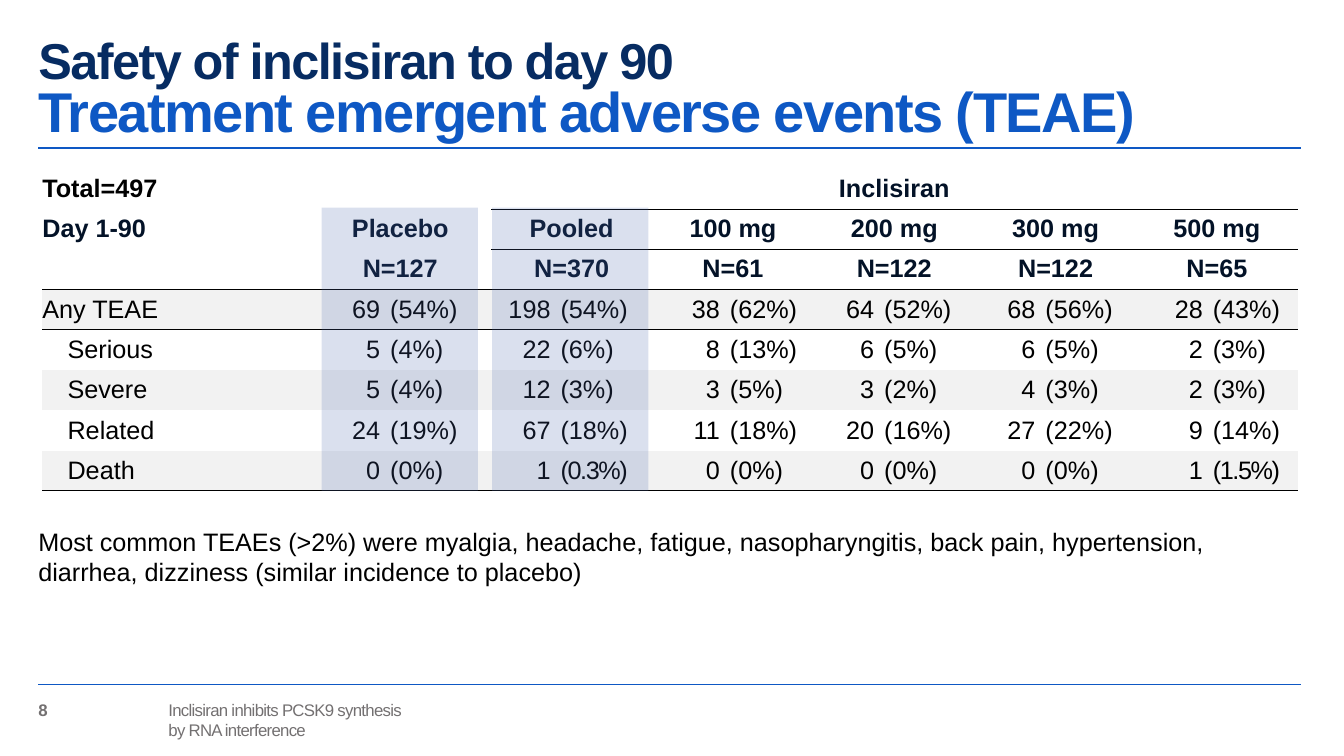
from copy import deepcopy

from lxml import etree
from pptx import Presentation
from pptx import util as u
from pptx.dml import color as c
from pptx.enum import shapes, text
from pptx.oxml import ns

SCALE = 9144  # EMU per px, 100 px to the inch
BLACK, WHITE, BAND = "000000", "FFFFFF", "F2F2F2"
NAVY, BLUE, INK, GREY, TINT = "072C62", "0E58C4", "031227", "737071", "4A66AC"
NO_GRID = "{2D5ABB26-0587-4C30-8999-92F81FD0307C}"
LEFT, CENTER, RIGHT = text.PP_ALIGN.LEFT, text.PP_ALIGN.CENTER, text.PP_ALIGN.RIGHT

COLUMNS = [275, 60, 100, 10, 59, 101, 67, 93, 60, 100, 60, 100, 66, 94]
ROW_HEIGHT = 40
GAP_COLUMN = 3
GROUPS = [  # first column, dose, group size
    (1, "Placebo", "N=127"),
    (4, "Pooled", "N=370"),
    (6, "100 mg", "N=61"),
    (8, "200 mg", "N=122"),
    (10, "300 mg", "N=122"),
    (12, "500 mg", "N=65"),
]
EVENTS = {
    "Any TEAE": "69 (54%) 198 (54%) 38 (62%) 64 (52%) 68 (56%) 28 (43%)",
    "Serious": "5 (4%) 22 (6%) 8 (13%) 6 (5%) 6 (5%) 2 (3%)",
    "Severe": "5 (4%) 12 (3%) 3 (5%) 3 (2%) 4 (3%) 2 (3%)",
    "Related": "24 (19%) 67 (18%) 11 (18%) 20 (16%) 27 (22%) 9 (14%)",
    "Death": "0 (0%) 1 (0.3%) 0 (0%) 0 (0%) 0 (0%) 1 (1.5%)",
}
# row -> (border tag, points, first column)
RULES = {
    0: ("a:lnB", 0.25, 4),
    1: ("a:lnT", 0.25, 4),
    2: ("a:lnB", 1, 0),
    3: ("a:lnT", 1, 0),
    7: ("a:lnB", 1, 0),
}


def px(length):
    return u.Emu(length * SCALE)


def rgb(value):
    return c.RGBColor.from_string(value)


def set_all(target, **values):
    for name, value in values.items():
        setattr(target, name, value)


def add_span(para, words, size, color, bold=False, spacing=0):
    span = para.add_run()
    span.text = words
    set_all(span.font, name="Arial", size=u.Pt(size), bold=bold)
    span.font.color.rgb = rgb(color)
    if spacing:
        span.font._element.set("spc", str(round(spacing * 100)))
    return span


def add_break(para, span):
    """End the line, keeping the size of the span before it."""
    para.add_line_break()
    para._p[-1].append(deepcopy(span.font._element))


def set_frame(frame, anchor=text.MSO_ANCHOR.TOP):
    set_all(frame, word_wrap=True, auto_size=text.MSO_AUTO_SIZE.NONE,
            vertical_anchor=anchor, margin_left=0, margin_top=0,
            margin_right=0, margin_bottom=0)
    return frame.paragraphs[0]


def add_box(slide, left, top, width, height):
    box = slide.shapes.add_textbox(px(left), px(top), px(width), px(height))
    return set_frame(box.text_frame)


def add_rule(slide, top):
    line = slide.shapes.add_connector(
        shapes.MSO_CONNECTOR.STRAIGHT, px(1290), px(top), px(38), px(top))
    line.line.color.rgb = rgb(BLUE)
    line.line.width = u.Pt(1)
    etree.SubElement(line._element.spPr, ns.qn("a:effectLst"))


def add_highlight(slide, left):
    band = slide.shapes.add_shape(
        shapes.MSO_SHAPE.RECTANGLE, px(left), px(206), px(155), px(281))
    band.shadow.inherit = False
    band.line.fill.background()
    band.fill.solid()
    band.fill.fore_color.rgb = rgb(TINT)
    tint = band._element.spPr.find(".//" + ns.qn("a:srgbClr"))
    etree.SubElement(tint, ns.qn("a:alpha"), val="20000")


def add_title(slide):
    title = slide.shapes.title
    set_all(title, left=px(38), top=px(35), width=px(1252), height=px(112))
    para = set_frame(title.text_frame, text.MSO_ANCHOR.MIDDLE)
    set_all(para, alignment=LEFT, line_spacing=0.8)
    first = add_span(para, "Safety of inclisiran to day 90", 36, NAVY, True, -1.1)
    add_break(para, first)
    add_span(para, "Treatment emergent adverse events (TEAE)", 40, BLUE, True, -1.1)


def add_footer(slide):
    para = add_box(slide, 38, 694, 1261, 40)
    tabs = etree.SubElement(para._p.get_or_add_pPr(), ns.qn("a:tabLst"))
    etree.SubElement(tabs, ns.qn("a:tab"), pos=str(px(129)), algn="l")
    add_span(para, "8\t", 12, GREY, True)
    first = add_span(para, "Inclisiran inhibits PCSK9 synthesis", 12, GREY, spacing=-0.5)
    add_break(para, first)
    add_span(para, "\tby RNA interference", 12, GREY, spacing=-0.5)


def prepare_cell(cell, row, column):
    """Clear the margins, then draw the rule and the row fill."""
    set_all(cell, margin_left=0, margin_top=0, margin_right=0, margin_bottom=0,
            vertical_anchor=text.MSO_ANCHOR.MIDDLE)
    tag, points, first = RULES.get(row, (None, 0, len(COLUMNS)))
    if column >= first:
        border = etree.SubElement(
            cell._tc.get_or_add_tcPr(), ns.qn(tag), w=str(u.Pt(points)))
        fill = etree.SubElement(border, ns.qn("a:solidFill"))
        etree.SubElement(fill, ns.qn("a:srgbClr"), val=BLACK)
    cell.fill.solid()
    cell.fill.fore_color.rgb = rgb(BAND if row in (3, 5, 7) else WHITE)


def write_cell(cell, words, align=LEFT, color=BLACK, bold=False, spacing=0):
    para = cell.text_frame.paragraphs[0]
    para.alignment = align
    add_span(para, words, 18, color, bold, spacing)


def write_header(table):
    write_cell(table.cell(0, 0), "Total=497", bold=True)
    write_cell(table.cell(1, 0), "Day 1-90", color=INK, bold=True)
    table.cell(0, 1).merge(table.cell(0, 2))
    table.cell(0, 4).merge(table.cell(0, 13))
    write_cell(table.cell(0, 4), "Inclisiran", CENTER, INK, True)
    for column, *labels in GROUPS:
        for row, label in enumerate(labels, 1):
            table.cell(row, column).merge(table.cell(row, column + 1))
            write_cell(table.cell(row, column), label, CENTER, INK, True)


def write_events(table):
    value_columns = [n for n in range(1, len(COLUMNS)) if n != GAP_COLUMN]
    for row, (event, values) in enumerate(EVENTS.items(), 3):
        name = table.cell(row, 0)
        write_cell(name, event)
        if event != "Any TEAE":
            name.text_frame.paragraphs[0]._p.get_or_add_pPr().set("marL", str(px(25)))
        for column, value in zip(value_columns, values.split()):
            cell = table.cell(row, column)
            percent = value.startswith("(")
            cell.margin_left = px(10 if percent else 0)
            write_cell(cell, value, LEFT if percent else RIGHT,
                       spacing=-1 if "." in value else 0)


def add_event_table(slide):
    rows = 3 + len(EVENTS)
    table = slide.shapes.add_table(
        rows, len(COLUMNS), px(42), px(167), px(sum(COLUMNS)), px(rows * ROW_HEIGHT)).table
    set_all(table, first_row=False, horz_banding=False)
    table._tbl.tblPr.find(ns.qn("a:tableStyleId")).text = NO_GRID
    for column, width in zip(table.columns, COLUMNS):
        column.width = px(width)
    for row in range(rows):
        table.rows[row].height = px(ROW_HEIGHT)
        for column in range(len(COLUMNS)):
            prepare_cell(table.cell(row, column), row, column)
    write_header(table)
    write_events(table)


def main():
    deck = Presentation()
    set_all(deck, slide_width=px(1333), slide_height=px(750))
    slide = deck.slides.add_slide(deck.slide_layouts[5])
    add_rule(slide, 147)
    add_footer(slide)
    add_rule(slide, 679)
    add_title(slide)
    add_event_table(slide)
    note = add_box(slide, 38, 522, 1235, 130)
    add_span(note, "Most common TEAEs (>2%) were myalgia, headache, fatigue, "
             "nasopharyngitis, back pain, hypertension, diarrhea, dizziness "
             "(similar incidence to placebo)", 18, BLACK)
    for left in (319, 488):
        add_highlight(slide, left)
    deck.save("out.pptx")


if __name__ == "__main__":
    main()
